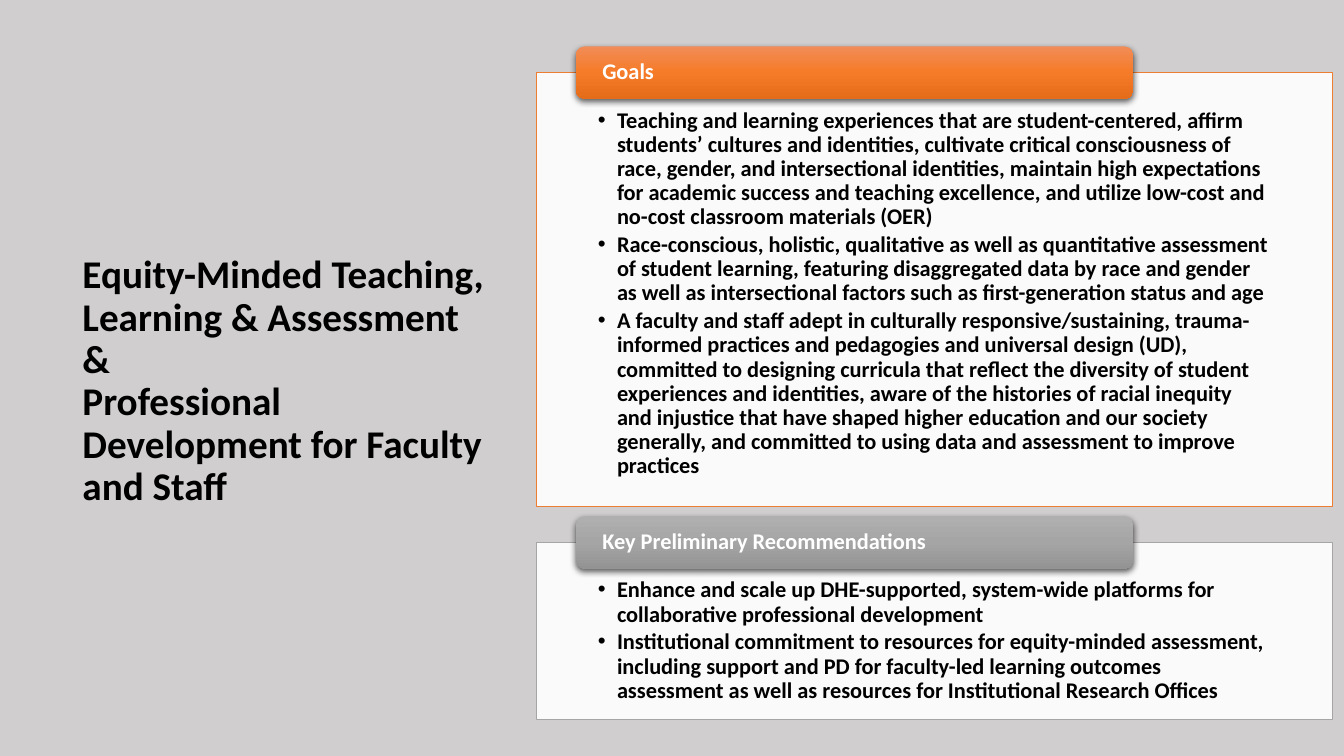
import pptx
import pptx.dml.color
import pptx.enum.shapes
import pptx.enum.text
import pptx.oxml
import pptx.oxml.ns
import pptx.util
from pptx.util import Cm

FONT = "Calibri"
NAMESPACE = pptx.oxml.ns.nsdecls("a")
TITLE_LINES = [
    "Equity-Minded Teaching, Learning & Assessment",
    "&",
    "Professional Development for Faculty and Staff",
]
PANEL_GAP = 0.92
PANELS = [
    {
        "heading": "Goals",
        "height": 10.92,
        "outline": "ED7D31",
        "gradient": ["F18C57", "F67B28", "E56C19"],
        "points": [
            "Teaching and learning experiences that are student-centered, affirm students’ cultures "
            "and identities, cultivate critical consciousness of race, gender, and intersectional "
            "identities, maintain high expectations for academic success and teaching excellence, "
            "and utilize low-cost and no-cost classroom materials (OER)",
            "Race-conscious, holistic, qualitative as well as quantitative assessment of student "
            "learning, featuring disaggregated data by race and gender as well as intersectional "
            "factors such as first-generation status and age",
            "A faculty and staff adept in culturally responsive/sustaining, trauma-informed practices "
            "and pedagogies and universal design (UD), committed to designing curricula that reflect "
            "the diversity of student experiences and identities, aware of the histories of racial "
            "inequity and injustice that have shaped higher education and our society generally, "
            "and committed to using data and assessment to improve practices",
        ],
    },
    {
        "heading": "Key Preliminary Recommendations",
        "height": 4.47,
        "outline": "A5A5A5",
        "gradient": ["AFAFAF", "A5A5A5", "939393"],
        "points": [
            "Enhance and scale up DHE-supported, system-wide platforms for collaborative "
            "professional development",
            "Institutional commitment to resources for equity-minded assessment, including support "
            "and PD for faculty-led learning outcomes assessment as well as resources for "
            "Institutional Research Offices",
        ],
    },
]


def color(value):
    """Turn a hex string into a colour."""
    return pptx.dml.color.RGBColor.from_string(value)


def add_span(para, text, size, value):
    """Add one bold run to a left-aligned paragraph."""
    para.alignment = pptx.enum.text.PP_ALIGN.LEFT
    para.line_spacing = 0.9
    span = para.add_run()
    span.text = text
    span.font.name = FONT
    span.font.size = pptx.util.Pt(size)
    span.font.bold = True
    span.font.color.rgb = color(value)


def set_frame(frame, anchor, left, top, right, bottom):
    """Set wrapping, anchor and margins of a text frame."""
    frame.word_wrap = True
    frame.vertical_anchor = anchor
    frame.margin_left, frame.margin_top = Cm(left), Cm(top)
    frame.margin_right, frame.margin_bottom = Cm(right), Cm(bottom)


def add_title(page, left, top, width, height):
    """Place the slide title at the bottom of its box."""
    box = page.shapes.add_textbox(Cm(left), Cm(top), Cm(width), Cm(height))
    set_frame(box.text_frame, pptx.enum.text.MSO_ANCHOR.BOTTOM, 0.25, 0.13, 0.25, 0.13)
    para = box.text_frame.paragraphs[0]
    for index, line in enumerate(TITLE_LINES):
        if index:
            para.add_line_break()
        add_span(para, line, 28, "000000")


def add_body(page, panel, left, top, width):
    """Place the outlined box with its bulleted points."""
    body = page.shapes.add_shape(
        pptx.enum.shapes.MSO_SHAPE.RECTANGLE, Cm(left), Cm(top), Cm(width), Cm(panel["height"]))
    body.shadow.inherit = False
    body.fill.solid()
    body.fill.fore_color.rgb = color("FFFFFF")
    white = body.element.spPr.find(".//" + pptx.oxml.ns.qn("a:srgbClr"))
    white.append(pptx.oxml.parse_xml(f'<a:alpha {NAMESPACE} val="90000"/>'))
    body.line.color.rgb = color(panel["outline"])
    body.line.width = pptx.util.Pt(0.5)
    frame = body.text_frame
    set_frame(frame, pptx.enum.text.MSO_ANCHOR.TOP, 1.56, 0.91, 1.56, 0.3)
    for index, point in enumerate(panel["points"]):
        para = frame.add_paragraph() if index else frame.paragraphs[0]
        add_span(para, point, 16, "000000")
        para.space_after = pptx.util.Pt(2.6)
        settings = para._p.get_or_add_pPr()
        settings.set("marL", str(Cm(0.48)))
        settings.set("indent", str(-Cm(0.48)))
        settings.append(pptx.oxml.parse_xml(f'<a:buFont {NAMESPACE} typeface="Arial"/>'))
        settings.append(pptx.oxml.parse_xml(f'<a:buChar {NAMESPACE} char="•"/>'))


def add_heading(page, panel, left, top, width, height):
    """Place the shaded heading tab with its soft shadow."""
    tab = page.shapes.add_shape(
        pptx.enum.shapes.MSO_SHAPE.ROUNDED_RECTANGLE, Cm(left), Cm(top), Cm(width), Cm(height))
    tab.line.fill.background()
    stops = "".join(
        f'<a:gs pos="{index * 50000}"><a:srgbClr val="{value}"/></a:gs>'
        for index, value in enumerate(panel["gradient"]))
    properties = tab.element.spPr
    properties.find(pptx.oxml.ns.qn("a:ln")).addprevious(pptx.oxml.parse_xml(
        f'<a:gradFill {NAMESPACE} rotWithShape="1"><a:gsLst>{stops}</a:gsLst>'
        '<a:lin ang="5400000" scaled="0"/></a:gradFill>'))
    tab.shadow.inherit = False
    properties.find(pptx.oxml.ns.qn("a:effectLst")).append(pptx.oxml.parse_xml(
        f'<a:outerShdw {NAMESPACE} blurRad="57150" dist="19050" dir="5400000" algn="ctr" '
        'rotWithShape="0"><a:srgbClr val="000000"><a:alpha val="63000"/></a:srgbClr></a:outerShdw>'))
    set_frame(tab.text_frame, pptx.enum.text.MSO_ANCHOR.MIDDLE, 0.6, 0, 0.6, 0)
    add_span(tab.text_frame.paragraphs[0], panel["heading"], 16, "FFFFFF")


def add_panel(page, panel, left, top, width):
    """Place one panel with its heading tab centred on the top edge."""
    tab_height = 1.32
    add_body(page, panel, left, top, width)
    add_heading(page, panel, left + width * 0.05, top - tab_height / 2, width * 0.7, tab_height)


def main():
    """Build and save the slide."""
    deck = pptx.Presentation()
    deck.slide_width, deck.slide_height = Cm(33.87), Cm(19.05)
    page = deck.slides.add_slide(deck.slide_layouts[6])
    page.background.fill.solid()
    page.background.fill.fore_color.rgb = color("D0CECE")
    add_title(page, 1.83, 5.16, 10.92, 7.8)
    top = 1.83
    for panel in PANELS:
        add_panel(page, panel, 13.51, top, 20.07)
        top += panel["height"] + PANEL_GAP
    deck.save("out.pptx")


if __name__ == "__main__":
    main()
